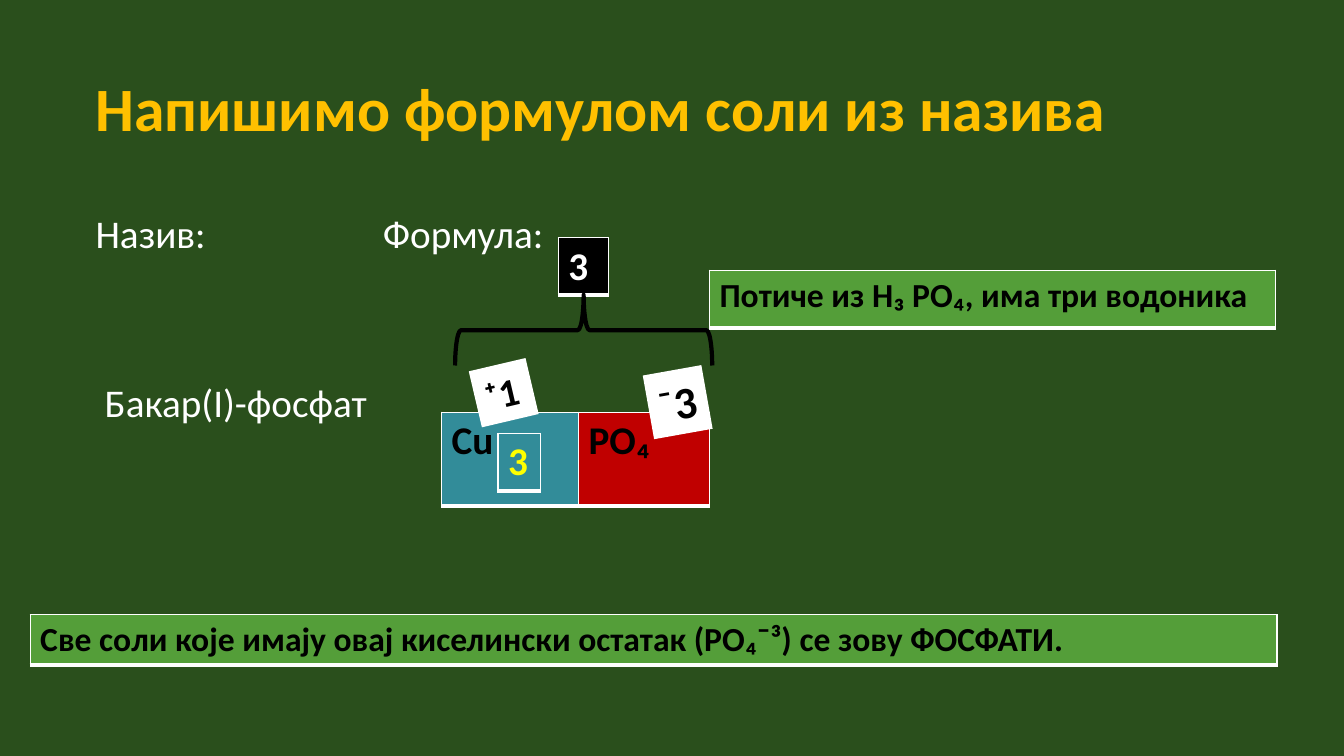
"""Build a slide that derives the formula of copper(I) phosphate from its name."""
from lxml import etree
from pptx import Presentation
from pptx.dml.color import RGBColor
from pptx.enum.shapes import MSO_SHAPE
from pptx.enum.text import MSO_ANCHOR
from pptx.oxml.ns import qn
from pptx.util import Cm, Pt

RIGHT_BRACE = MSO_SHAPE.RIGHT_BRACE
TOP, MIDDLE = MSO_ANCHOR.TOP, MSO_ANCHOR.MIDDLE
WHITE, BLACK, GOLD, YELLOW = "FFFFFF", "000000", "FFC000", "FFFF00"
DARK_GREEN, GREEN, TEAL, RED = "2A4F1C", "549E39", "328C99", "C00000"
BORDERS = {"a:lnL": 1, "a:lnR": 1, "a:lnT": 1, "a:lnB": 3}


def color(value):
    return RGBColor.from_string(value)


def write(frame, text, size, ink, bold=True, spacing=1.0):
    paragraph = frame.paragraphs[0]
    paragraph.line_spacing = spacing
    run = paragraph.add_run()
    run.text = text
    font_format = {"name": "Calibri", "size": Pt(size), "bold": bold}
    for attribute, value in font_format.items():
        setattr(run.font, attribute, value)
    run.font.color.rgb = color(ink)


deck = Presentation()
deck.slide_width, deck.slide_height = Cm(33.87), Cm(19.05)
slide = deck.slides.add_slide(deck.slide_layouts[6])
slide.background.fill.solid()
slide.background.fill.fore_color.rgb = color(DARK_GREEN)

headings = [
    ("Напишимо формулом соли из назива", 2.16, 0.94, 29.36, 3.76, 44, GOLD, True, MIDDLE),
    ("Назив:", 2.16, 5.28, 5, 1.4, 28, WHITE, False, TOP),
    ("Формула:", 9.4, 5.28, 5, 1.4, 28, WHITE, False, TOP),
    ("Бакар(I)-фосфат", 2.39, 9.54, 8, 1.4, 28, WHITE, False, TOP),
]
for text, left, top, width, height, size, ink, bold, anchor in headings:
    heading = slide.shapes.add_textbox(Cm(left), Cm(top), Cm(width), Cm(height))
    heading.text_frame.word_wrap = True
    heading.text_frame.vertical_anchor = anchor
    write(heading.text_frame, text, size, ink, bold, 0.9)

panels = [
    (11.13, 10.39, 2.36, 28, BLACK, [("Cu", 3.45, TEAL), ("PO₄", 3.3, RED)]),
    (14.07, 5.99, 1.45, 28, WHITE, [("3", 1.27, BLACK)]),
    (12.55, 10.92, 1.45, 28, YELLOW, [("3", 1.07, None)]),
    (17.88, 6.81, 1.45, 24, BLACK, [("Потиче из H₃ PO₄, има три водоника", 14.27, GREEN)]),
    (0.76, 15.49, 1.27, 24, BLACK,
     [("Све соли које имају овај киселински остатак (PO₄¯³) се зову ФОСФАТИ.", 31.42, GREEN)]),
]
for left, top, height, size, ink, cells in panels:
    total_width = sum(width for _, width, _ in cells)
    panel = slide.shapes.add_table(
        1, len(cells), Cm(left), Cm(top), Cm(total_width), Cm(height)).table
    panel.first_row = panel.horz_banding = False
    for column, (text, width, fill) in enumerate(cells):
        panel.columns[column].width = Cm(width)
        cell = panel.cell(0, column)
        write(cell.text_frame, text, size, ink)
        properties = cell._tc.get_or_add_tcPr()
        for tag, points in BORDERS.items():
            border = etree.SubElement(properties, qn(tag), w=str(Pt(points)))
            border_fill = etree.SubElement(border, qn("a:solidFill"))
            etree.SubElement(border_fill, qn("a:srgbClr"), val=WHITE)
        if fill:
            cell.fill.solid()
            cell.fill.fore_color.rgb = color(fill)
        else:
            cell.fill.background()

charges = [
    ("⁺1", 11.96, 9.17, 1.47, 1.45, 346.8, 28),
    ("⁻3", 16.33, 9.32, 1.5, 1.63, 349.9, 32),
]
for text, left, top, width, height, angle, size in charges:
    charge = slide.shapes.add_textbox(Cm(left), Cm(top), Cm(width), Cm(height))
    charge.rotation = angle
    charge.fill.solid()
    charge.fill.fore_color.rgb = color(WHITE)
    charge.text_frame.word_wrap = False
    write(charge.text_frame, text, size, BLACK)

brace = slide.shapes.add_shape(RIGHT_BRACE, Cm(13.82), Cm(5.08), Cm(1.78), Cm(6.48))
brace.rotation = 270
brace.shadow.inherit = False
brace.fill.background()
brace.line.color.rgb = color(BLACK)
brace.line.width = Pt(3)

deck.save("out.pptx")
